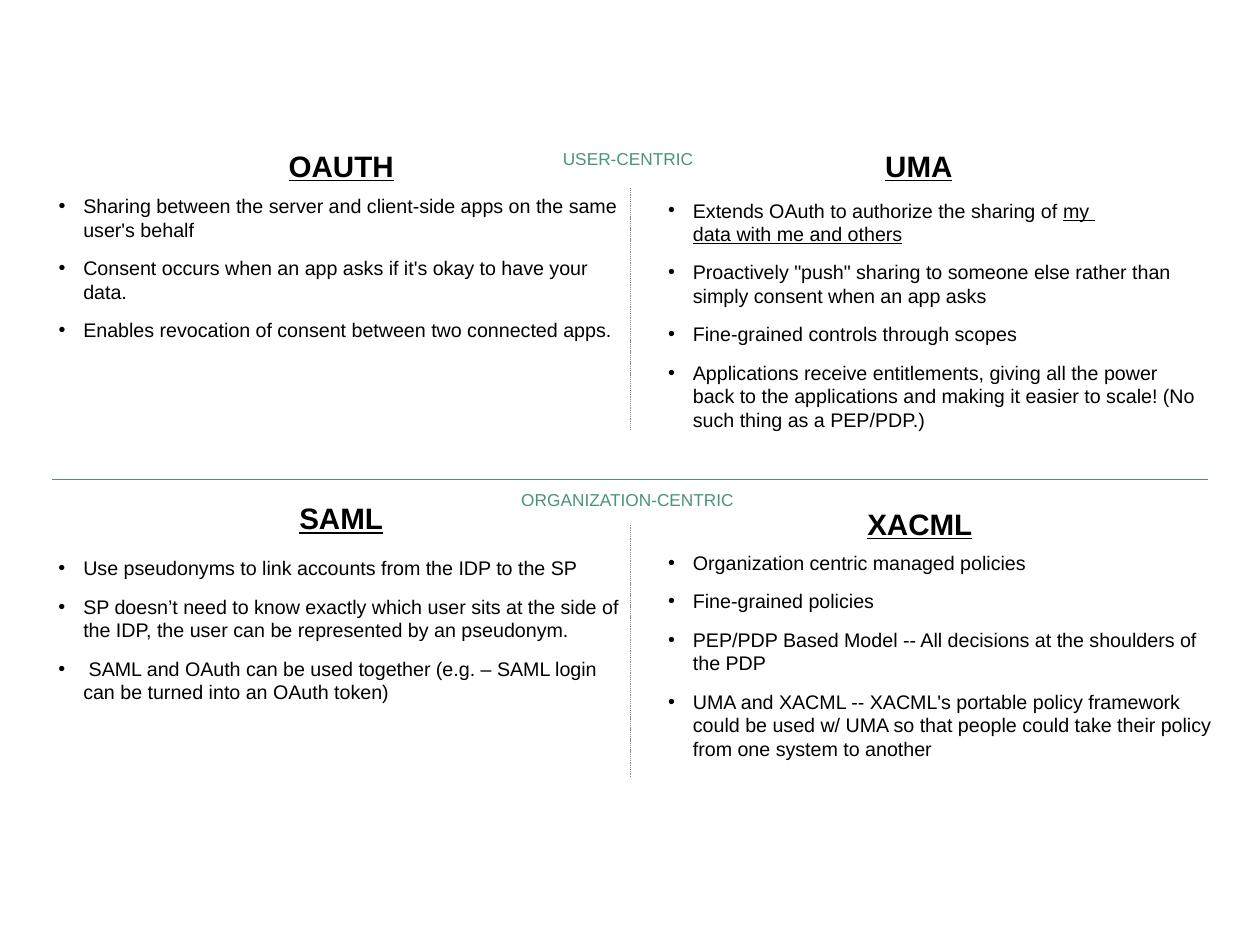
from lxml.etree import SubElement
from pptx import Presentation
from pptx.dml.color import RGBColor
from pptx.enum.dml import MSO_LINE as Dash
from pptx.enum.shapes import MSO_CONNECTOR as Conn
from pptx.enum.text import MSO_AUTO_SIZE as Fit, PP_ALIGN as Align
from pptx.oxml.ns import qn
from pptx.util import Inches, Pt

GREEN, GRAY, BLACK = "4A927E", "889196", "000000"
HEAD = {"size": Pt(24), "name": "Arial", "bold": True, "underline": True}
BODY = {"size": Pt(16), "name": "Arial"}
LABEL = {"size": Pt(14), "name": "Arial"}


def color(code):
    return RGBColor.from_string(code)


def add_text(spot, lines, style, tint=BLACK, bullet=False):
    box = slide.shapes.add_textbox(*map(Inches, spot))
    frame = box.text_frame
    frame.word_wrap = True
    frame.auto_size = Fit.SHAPE_TO_FIT_TEXT
    for side in ("left", "right", "top", "bottom"):
        setattr(frame, "margin_" + side, Inches(0.07))
    for i, line in enumerate(lines):
        para = frame.add_paragraph() if i else frame.paragraphs[0]
        para.alignment = Align.LEFT if bullet else Align.CENTER
        if bullet:
            para.space_before = Pt(12 if i else 0)
            props = para._p.get_or_add_pPr()
            props.set("marL", str(Inches(0.28)))
            props.set("indent", str(-Inches(0.28)))
            SubElement(props, qn("a:buFont"), typeface="Arial")
            SubElement(props, qn("a:buChar"), char="•")
        # Underscores mark underlined words, a newline marks a line break
        for j, part in enumerate(line.split("_")):
            for k, piece in enumerate(part.split("\n")):
                if k:
                    para.add_line_break()
                run = para.add_run()
                run.text = piece
                for key, value in style.items():
                    setattr(run.font, key, value)
                run.font.color.rgb = color(tint)
                if j % 2:
                    run.font.underline = True


deck = Presentation()
deck.slide_width, deck.slide_height = Inches(14.22), Inches(10.67)
slide = deck.slides.add_slide(deck.slide_layouts[6])

# Dividers
for x1, y1, x2, y2, tint, width, dash in [
    (7.11, 2.12, 7.11, 4.86, GRAY, 0.25, Dash.DASH),
    (7.11, 5.93, 7.11, 8.78, GRAY, 0.25, Dash.DASH),
    (13.63, 5.41, 0.59, 5.41, GREEN, 1, Dash.SOLID),
]:
    rule = slide.shapes.add_connector(
        Conn.STRAIGHT, *map(Inches, (x1, y1, x2, y2)))
    rule.line.color.rgb = color(tint)
    rule.line.width = Pt(width)
    rule.line.dash_style = dash
    SubElement(rule._element.spPr, qn("a:effectLst"))

# Four quadrants: title, title place, body place, points
for title, left, top, spot, points in [
    ("OAUTH", 0.59, 1.6, (0.59, 2.12, 6.52, 1.72), [
        "Sharing between the server and client-side apps on the same user's behalf",
        "Consent occurs when an app asks if it's okay to have your data.",
        "Enables revocation of consent between two connected apps.",
    ]),
    ("UMA", 7.11, 1.6, (7.47, 2.17, 6.16, 2.63), [
        "Extends OAuth to authorize the sharing of _my \ndata with me and others_",
        'Proactively "push" sharing to someone else rather than simply consent '
        "when an app asks",
        "Fine-grained controls through scopes",
        "Applications receive entitlements, giving all the power back to the "
        "applications and making it easier to scale! (No such thing as a PEP/PDP.)",
    ]),
    ("SAML", 0.59, 5.58, (0.59, 6.21, 6.53, 1.72), [
        "Use pseudonyms to link accounts from the IDP to the SP",
        "SP doesn’t need to know exactly which user sits at the side of the IDP, "
        "the user can be represented by an pseudonym.",
        " SAML and OAuth can be used together (e.g. – SAML login can be turned "
        "into an OAuth token)",
    ]),
    ("XACML", 7.12, 5.64, (7.47, 6.15, 6.28, 2.38), [
        "Organization centric managed policies",
        "Fine-grained policies",
        "PEP/PDP Based Model -- All decisions at the shoulders of the PDP",
        "UMA and XACML -- XACML's portable policy framework could be used w/ UMA "
        "so that people could take their policy from one system to another",
    ]),
]:
    add_text((left, top, 6.52, 0.52), [title], HEAD)
    add_text(spot, points, BODY, bullet=True)

# Row labels
add_text((5.87, 1.61, 2.49, 0.36), ["USER-CENTRIC "], LABEL, GREEN)
add_text((5.42, 5.45, 3.38, 0.36), ["ORGANIZATION-CENTRIC "], LABEL, GREEN)

deck.save("out.pptx")
